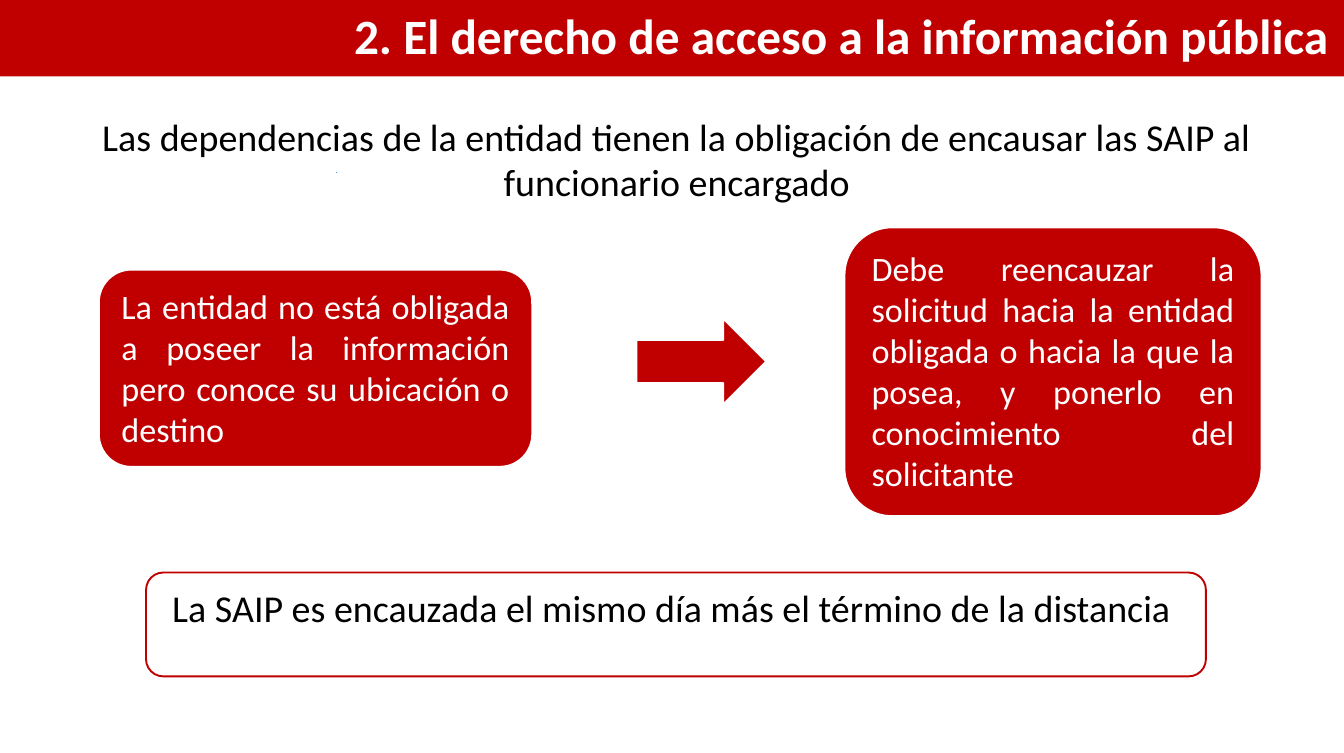
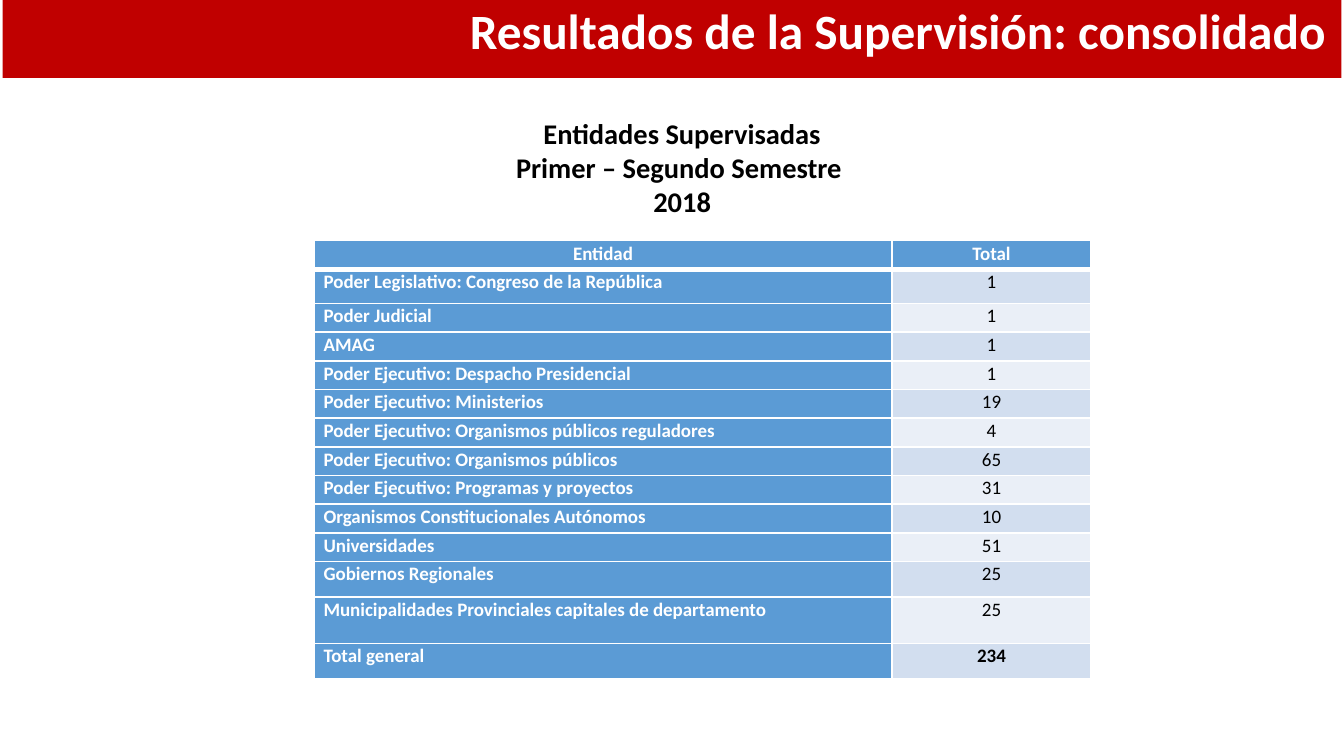
from typing import NamedTuple

from pptx import Presentation
from pptx import util as u
from pptx.dml.color import RGBColor
from pptx.enum import shapes, text
from pptx.oxml import parse_xml
from pptx.oxml.ns import nsdecls

SLIDE_WIDTH, SLIDE_HEIGHT = u.Inches(9.84), u.Inches(5.51)
FONT = "Calibri"
RED, WHITE, BLACK = "C00000", "FFFFFF", "000000"
BLUE, BLUE_TINTS = "5B9BD5", ("D2DEEF", "EAEFF7")
ALIGN, ANCHOR, FORM = text.PP_ALIGN, text.MSO_ANCHOR, shapes.MSO_SHAPE


class Area(NamedTuple):
    """A rectangle in percent of the slide's width and height."""
    left: float
    top: float
    width: float
    height: float

    def emu(self) -> tuple[int, int, int, int]:
        return (round(self.left * SLIDE_WIDTH / 100), round(self.top * SLIDE_HEIGHT / 100),
                round(self.width * SLIDE_WIDTH / 100), round(self.height * SLIDE_HEIGHT / 100))


class TextStyle(NamedTuple):
    size: float
    color: str
    align: ALIGN
    bold: bool = False
    spacing: float = 1.0


class Box(NamedTuple):
    area: Area
    form: FORM
    fill: str
    line: str
    line_width: float
    content: str = ""
    style: TextStyle | None = None


class EntityRow(NamedTuple):
    entity: str
    total: str
    height: float = 0.21


TITLE = TextStyle(26, WHITE, ALIGN.RIGHT, True, 0.9)
INTRO = TextStyle(20, BLACK, ALIGN.CENTER)
STEP = TextStyle(18, WHITE, ALIGN.JUSTIFY)
HEADING = TextStyle(15, BLACK, ALIGN.CENTER, True)
HEADER_CELL = TextStyle(10, WHITE, ALIGN.CENTER, True, 1.07)
ENTITY_CELL = HEADER_CELL._replace(align=ALIGN.LEFT)
TOTAL_CELL = HEADER_CELL._replace(color=BLACK, bold=False)

REFERRAL_BOXES = [
    Box(Area(47.36, 42.29, 9.65, 11.43), FORM.RIGHT_ARROW, RED, WHITE, 1),
    Box(Area(62.8, 30.13, 31.1, 38.48), FORM.ROUNDED_RECTANGLE, RED, WHITE, 1.5,
        "Debe reencauzar la solicitud hacia la entidad obligada o hacia la que la posea, "
        "y ponerlo en conocimiento del solicitante", STEP),
    Box(Area(7.32, 35.75, 32.32, 26.32), FORM.ROUNDED_RECTANGLE, RED, WHITE, 1.5,
        "La entidad no está obligada a poseer la información pero conoce su ubicación "
        "o destino", STEP),
    Box(Area(10.87, 76.04, 78.86, 13.79), FORM.ROUNDED_RECTANGLE, WHITE, RED, 1,
        "La SAIP es encauzada el mismo día más el término de la distancia ", INTRO),
]

ENTITY_ROWS = [
    EntityRow("Entidad", "Total"),
    EntityRow("Poder Legislativo: Congreso de la República", "1", 0.25),
    EntityRow("Poder Judicial", "1"),
    EntityRow("AMAG", "1"),
    EntityRow("Poder Ejecutivo: Despacho Presidencial", "1"),
    EntityRow("Poder Ejecutivo: Ministerios", "19"),
    EntityRow("Poder Ejecutivo: Organismos públicos reguladores", "4"),
    EntityRow("Poder Ejecutivo: Organismos públicos", "65"),
    EntityRow("Poder Ejecutivo: Programas y proyectos", "31"),
    EntityRow("Organismos Constitucionales Autónomos", "10"),
    EntityRow("Universidades", "51"),
    EntityRow("Gobiernos Regionales", "25", 0.26),
    EntityRow("Municipalidades Provinciales capitales de departamento", "25", 0.34),
    EntityRow("Total general", "234", 0.26),
]


def rgb(value: str) -> RGBColor:
    return RGBColor.from_string(value)


def paint(target, color: str) -> None:
    target.fill.solid()
    target.fill.fore_color.rgb = rgb(color)


def write(frame, content: str, style: TextStyle) -> None:
    frame.text = content
    for paragraph in frame.paragraphs:
        paragraph.alignment = style.align
        paragraph.line_spacing = style.spacing
        for run in paragraph.runs:
            run.font.name, run.font.size = FONT, u.Pt(style.size)
            run.font.bold, run.font.color.rgb = style.bold, rgb(style.color)


def add_titled_slide(deck, title: str, band: Area, anchor: ANCHOR):
    """Add a slide whose title placeholder is the red band."""
    slide = deck.slides.add_slide(deck.slide_layouts.get_by_name("Title Only"))
    heading = slide.shapes.title
    heading.left, heading.top, heading.width, heading.height = band.emu()
    paint(heading, RED)
    write(heading.text_frame, title, TITLE)
    heading.text_frame.vertical_anchor = anchor
    heading.text_frame.auto_size = text.MSO_AUTO_SIZE.NONE
    return slide


def add_text(slide, area: Area, content: str, style: TextStyle) -> None:
    frame = slide.shapes.add_textbox(*area.emu()).text_frame
    frame.word_wrap = True
    write(frame, content, style)


def add_box(slide, box: Box) -> None:
    shape = slide.shapes.add_shape(box.form, *box.area.emu())
    shape.shadow.inherit = False
    paint(shape, box.fill)
    shape.line.color.rgb = rgb(box.line)
    shape.line.width = u.Pt(box.line_width)
    if box.style:
        shape.text_frame.vertical_anchor = ANCHOR.TOP
        write(shape.text_frame, box.content, box.style)


def add_tick(slide, area: Area) -> None:
    left, top, width, height = area.emu()
    tick = slide.shapes.add_connector(shapes.MSO_CONNECTOR.STRAIGHT, left, top,
                                      left + width, top + height)
    tick.line.color.rgb = rgb(BLUE)
    tick.line.width = u.Pt(0.5)
    tick._element.spPr.append(parse_xml(f"<a:effectLst {nsdecls('a')}/>"))


def add_borders(cell, top: float, bottom: float) -> None:
    properties = cell._tc.get_or_add_tcPr()
    for side, width in (("L", 1), ("R", 1), ("T", top), ("B", bottom)):
        properties.append(parse_xml(
            f'<a:ln{side} {nsdecls("a")} w="{u.Pt(width)}"><a:solidFill>'
            f'<a:srgbClr val="{WHITE}"/></a:solidFill></a:ln{side}>'))


def add_entity_table(slide, area: Area, rows: list[EntityRow]) -> None:
    table = slide.shapes.add_table(len(rows), 2, *area.emu()).table
    for column, width in zip(table.columns, (4.23, 1.46)):
        column.width = u.Inches(width)
    for index, row in enumerate(rows):
        table.rows[index].height = u.Inches(row.height)
        if index == 0:
            styles, total_fill = (HEADER_CELL, HEADER_CELL), BLUE
        else:
            is_sum = index == len(rows) - 1
            styles = (ENTITY_CELL, TOTAL_CELL._replace(bold=is_sum))
            total_fill = BLUE_TINTS[(index - 1) % 2]
        contents = (row.entity, row.total)
        for cell, content, style, fill in zip(table.rows[index].cells, contents, styles,
                                              (BLUE, total_fill)):
            cell.margin_left = cell.margin_right = u.Inches(0.07)
            cell.margin_top = cell.margin_bottom = 0
            add_borders(cell, top=3 if index == 1 else 1, bottom=3 if index == 0 else 1)
            paint(cell, fill)
            write(cell.text_frame, content, style)


def main() -> None:
    deck = Presentation()
    deck.slide_width, deck.slide_height = SLIDE_WIDTH, SLIDE_HEIGHT

    access = add_titled_slide(deck, "2. El derecho de acceso a la información pública",
                              Area(0, 0, 100, 10.16), ANCHOR.MIDDLE)
    add_tick(access, Area(25, 22.87, 0.1, 0))
    add_text(access, Area(5.08, 14.16, 90.55, 13.97),
             "Las dependencias de la entidad tienen la obligación de encausar las SAIP "
             "al funcionario encargado", INTRO)
    for box in REFERRAL_BOXES:
        add_box(access, box)

    results = add_titled_slide(deck, "Resultados de la Supervisión: consolidado",
                               Area(0.2, 0, 99.6, 10.34), ANCHOR.TOP)
    add_entity_table(results, Area(23.37, 31.94, 57.82, 58.08), ENTITY_ROWS)
    add_text(results, Area(35.06, 14.52, 31.4, 15.61),
             "Entidades Supervisadas\nPrimer – Segundo Semestre \n2018", HEADING)

    deck.save("out.pptx")


if __name__ == "__main__":
    main()
